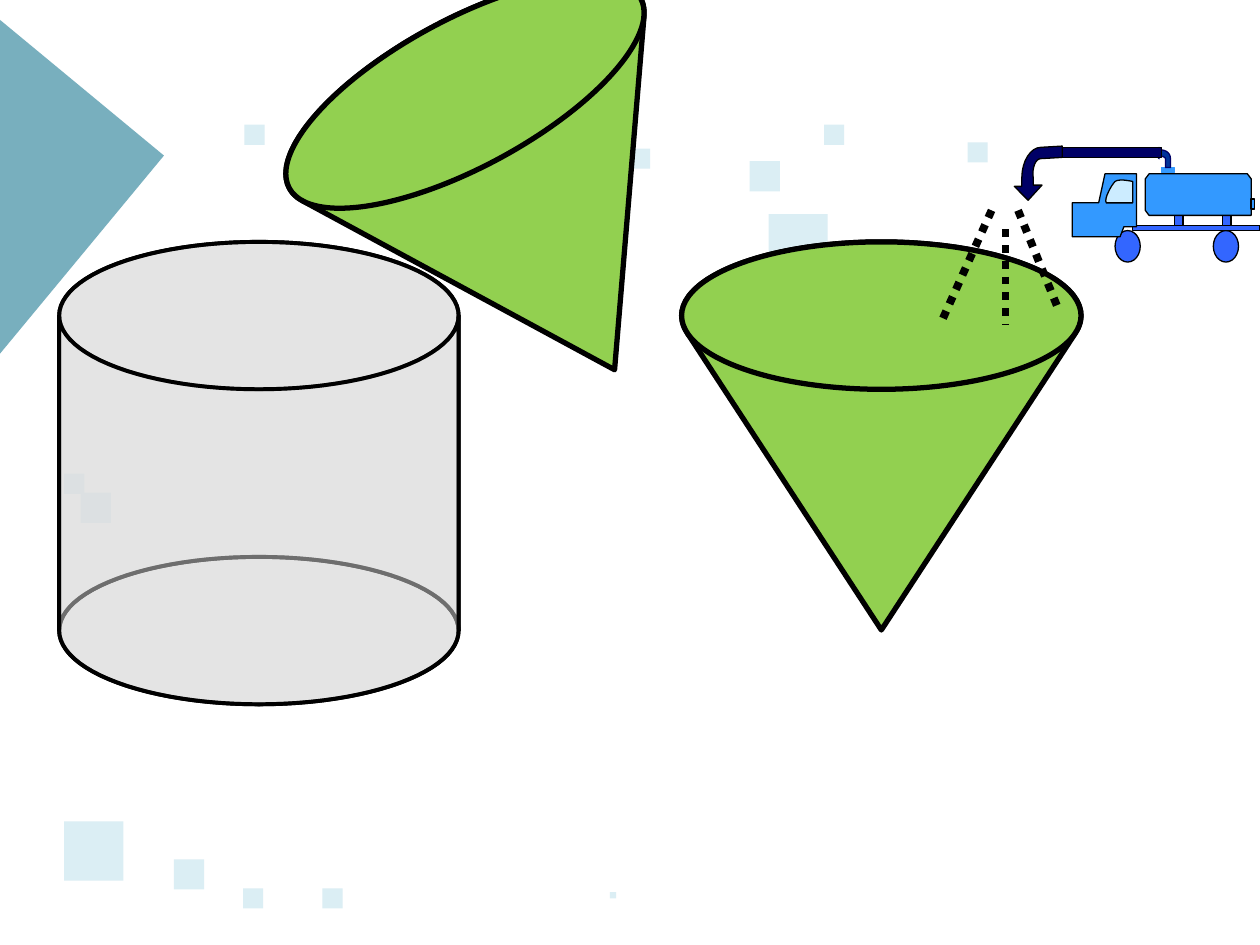
from math import cos, radians, sin
from lxml.etree import SubElement
from pptx import Presentation
from pptx.dml.color import RGBColor
from pptx.enum.dml import MSO_LINE
from pptx.enum.shapes import MSO_CONNECTOR, MSO_SHAPE
from pptx.oxml.ns import qn
from pptx.util import Cm, Pt

INK = {
    "teal": "31859C", "pale": "DBEEF4", "grey": "DDDDDD", "black": "000000",
    "green": "92D050", "wheel": "3366FF", "body": "3399FF", "glass": "CCECFF",
    "pipe": "003399", "navy": "000066",
}
SQUARES = {
    0.47: [(0.51, 6.52), (6.1, 1.7)],
    0.24: [(1.38, 6.82), (0.64, 3.91), (5.95, 1.28)],
    0.16: [(2.56, 7.05), (1.93, 7.05), (6.54, 0.99), (5, 1.18), (3.41, 1.15),
           (2.48, 1.15), (3.5, 0.82), (4.37, 1.32), (3.05, 1.4), (0.51, 3.76),
           (7.68, 1.13), (1.94, 0.99)],
    0.05: [(4.84, 7.08)],
}
WIDE, DEEP, TALL = 3.17, 1.17, 3.08
CAN = (0.47, 1.92)
CONES = [(5.41, 1.92, 0), (2.56, 0.04, -28.4)]
DROPS = [(8.08, 1.67, 8.39, 2.43), (7.98, 1.82, 7.98, 2.58), (7.87, 1.67, 7.46, 2.58)]
RECT, OVAL = MSO_SHAPE.RECTANGLE, MSO_SHAPE.OVAL
TRUCK = [
    (OVAL, (9.63, 1.83, 0.2, 0.25), "wheel", "black"),
    (OVAL, (8.85, 1.83, 0.2, 0.25), "wheel", "black"),
    (RECT, (8.99, 1.79, 1.01, 0.04), "wheel", "black"),
    (RECT, (9.7, 1.71, 0.07, 0.08), "wheel", "black"),
    (RECT, (9.32, 1.71, 0.07, 0.08), "wheel", "black"),
    (None, [(9.02, 1.8), (9.02, 1.38), (8.77, 1.38), (8.72, 1.61), (8.51, 1.61),
            (8.51, 1.88), (8.89, 1.88), (8.92, 1.8)], "body", "black"),
    (None, [(8.99, 1.44), (8.94, 1.43, 8.88, 1.42, 8.85, 1.44),
            (8.82, 1.47, 8.76, 1.58, 8.78, 1.61), (8.99, 1.61)], "glass", "black"),
    (None, [(9.93, 1.71), (9.12, 1.71), (9.09, 1.67), (9.09, 1.42), (9.12, 1.38),
            (9.9, 1.38), (9.93, 1.42)], "body", "black"),
    (RECT, (9.22, 1.33, 0.1, 0.04), "body", "body"),
    (RECT, (9.93, 1.58, 0.03, 0.08), "body", "black"),
    (None, [(9.16, 1.21), (9.2, 1.17), (9.2, 1.19), (9.21, 1.19),
            (9.26, 1.19, 9.29, 1.22, 9.29, 1.26), (9.29, 1.33), (9.25, 1.33),
            (9.25, 1.26), (9.25, 1.25, 9.23, 1.24, 9.21, 1.24), (9.2, 1.24),
            (9.2, 1.26)], "pipe", "navy"),
    (RECT, (8.28, 1.17, 0.94, 0.08), "navy", "black"),
    (None, [(8.16, 1.59), (8.05, 1.48), (8.11, 1.48), (8.11, 1.41),
            (8.11, 1.28, 8.18, 1.17, 8.26, 1.17), (8.43, 1.16), (8.43, 1.25),
            (8.26, 1.26), (8.22, 1.26, 8.19, 1.33, 8.2, 1.41), (8.2, 1.47),
            (8.27, 1.47)], "navy", "black"),
]


def size(inch):
    return Cm(inch * 2.54)


def tint(name):
    return RGBColor.from_string(INK[name])


def style(shape, fill, line=None, width=0.75, alpha=None, turn=0):
    shape.shadow.inherit = False
    shape.rotation = turn
    shape.fill.solid()
    shape.fill.fore_color.rgb = tint(fill)
    if alpha:
        color = shape.fill._xPr.find(qn("a:solidFill"))[0]
        SubElement(color, qn("a:alpha")).set("val", str(alpha * 1000))
    if line:
        shape.line.color.rgb = tint(line)
        shape.line.width = Pt(width)
    else:
        shape.line.fill.background()


def block(home, kind, box, *args, **look):
    style(home.add_shape(kind, *map(size, box)), *args, **look)


def smooth(path, steps=8):
    spots = []
    for step in path:
        if len(step) == 2:
            spots.append(step)
            continue
        start = spots[-1]
        ends = [start, step[:2], step[2:4], step[4:]]
        for n in range(1, steps + 1):
            t = n / steps
            parts = ((1 - t) ** 3, 3 * t * (1 - t) ** 2, 3 * t * t * (1 - t), t ** 3)
            spots.append(tuple(sum(w * p[i] for w, p in zip(parts, ends)) for i in (0, 1)))
    return spots


def outline(home, path, *args, **look):
    spots = [(size(x), size(y)) for x, y in smooth(path)]
    pen = home.build_freeform(*spots[0])
    pen.add_line_segments(spots[1:], close=True)
    style(pen.convert_to_shape(), *args, **look)


def arc(left, top, start, end, steps=48):
    spots = []
    for n in range(steps + 1):
        a = radians(start + (end - start) * n / steps)
        spots.append((left + WIDE / 2 * (1 + cos(a)), top + DEEP / 2 * (1 + sin(a))))
    return spots


def draw_can(home, left, top):
    low = top + 2.5
    look = dict(fill="grey", line="black", width=2.25, alpha=50)
    for y in (low, top):
        block(home, OVAL, (left, y, WIDE, DEEP), **look)
    for end in (360, 0):
        wall = arc(left, top, 180, end) + arc(left, low, end, 180)
        outline(home, wall, **look)


def draw_cone(home, left, top, turn):
    look = dict(fill="green", line="black", width=3, turn=turn)
    outline(home, arc(left, top, 166, 374) + [(left + WIDE / 2, top + TALL)], **look)
    reach, a = (TALL - DEEP) / 2, radians(turn)
    x = left + reach * sin(a)
    y = top + reach * (1 - cos(a))
    block(home, OVAL, (x, y, WIDE, DEEP), **look)


def draw_truck(home):
    for kind, form, fill, line in TRUCK:
        if kind is None:
            outline(home, form, fill, line)
        else:
            block(home, kind, form, fill, line)


def draw_drops(home):
    for ends in DROPS:
        drop = home.add_connector(MSO_CONNECTOR.STRAIGHT, *map(size, ends))
        drop.line.color.rgb = tint("black")
        drop.line.width = Pt(4.5)
        drop.line.dash_style = MSO_LINE.ROUND_DOT
        SubElement(drop.line._ln.getparent(), qn("a:effectLst"))


def main():
    deck = Presentation()
    deck.slide_width, deck.slide_height = Cm(25.4), Cm(19.05)
    page = deck.slides.add_slide(deck.slide_layouts[6]).shapes

    def group():
        return page.add_group_shape().shapes

    block(page, RECT, (-1.6, 0.19, 2.41, 2.41), "teal", alpha=65, turn=39.6)
    for side, spots in SQUARES.items():
        for x, y in spots:
            block(page, RECT, (x, y, side, side), "pale")
    draw_can(group(), *CAN)
    draw_truck(group())
    draw_cone(group(), *CONES[0])
    draw_drops(group())
    draw_cone(group(), *CONES[1])
    deck.save("out.pptx")


if __name__ == "__main__":
    main()
